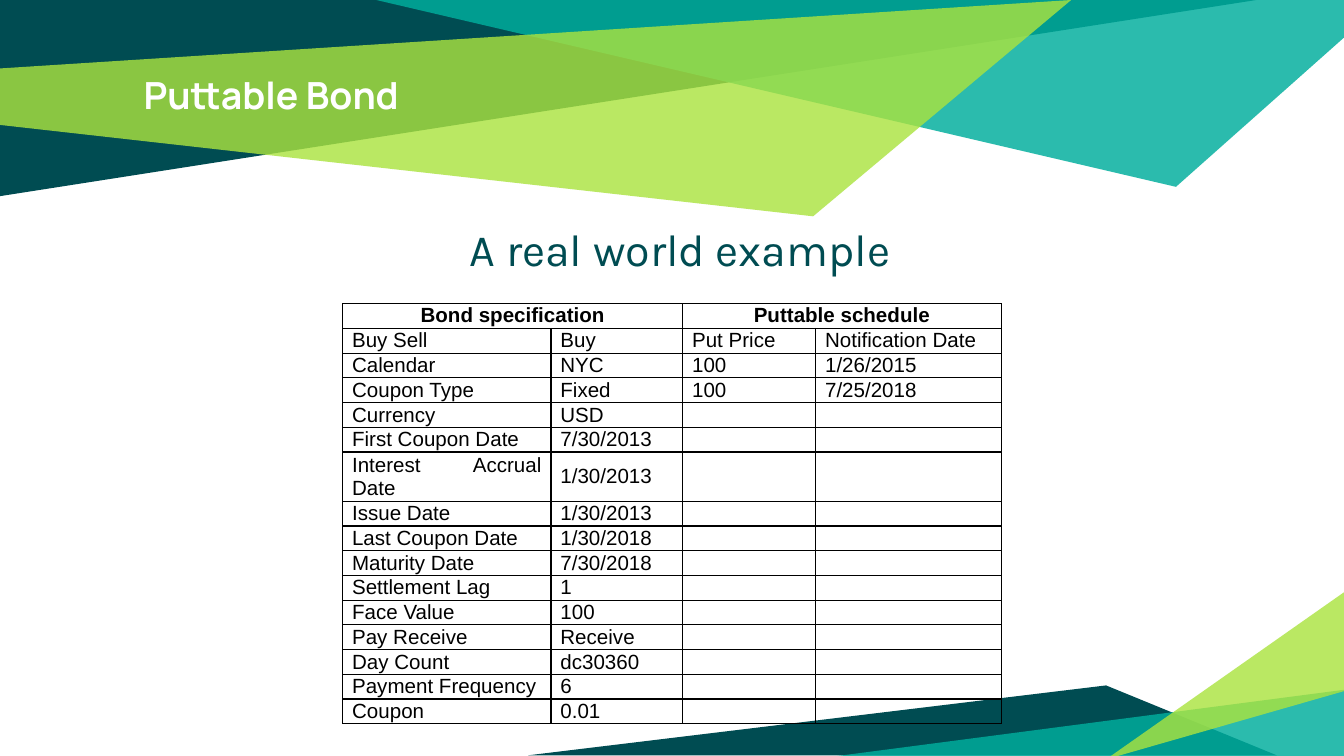
from dataclasses import dataclass

from lxml import etree
from pptx import Presentation
from pptx.dml.color import RGBColor
from pptx.enum.text import MSO_ANCHOR, PP_ALIGN
from pptx.oxml.ns import qn
from pptx.util import Inches, Pt

LEFT, CENTER, JUSTIFY = PP_ALIGN.LEFT, PP_ALIGN.CENTER, PP_ALIGN.JUSTIFY
TOP, MIDDLE = MSO_ANCHOR.TOP, MSO_ANCHOR.MIDDLE


@dataclass(frozen=True)
class Theme:
    dark: str = "004C52"
    teal: str = "00AE9D"
    lime: str = "ABE33F"
    white: str = "FFFFFF"
    black: str = "000000"
    title_font: str = "Manrope"
    body_font: str = "Karla"
    table_font: str = "Arial"
    title_size: int = 20
    body_size: int = 24
    table_size: int = 11
    border: float = 0.75


T = Theme()

# Colour, opacity in percent, corner points in inches
BANDS = [
    (T.dark, 100, [(0, 0), (0, 1.46), (9.35, 0)]),
    (T.teal, 83, [(2.8, 0), (8.75, 1.39), (10, 0.28), (10, 0)]),
    (T.lime, 81, [(-0.01, 0.51), (0, 0.93), (6.05, 1.61), (7.97, 0)]),
    (T.dark, 100, [(3.93, 5.62), (9.5, 5.62), (8.23, 5.1)]),
    (T.teal, 83, [(10.02, 5.13), (10.02, 5.65), (6.04, 5.65)]),
    (T.lime, 81, [(10.01, 5.14), (10.01, 4.4), (8.23, 5.65)]),
]

HEADERS = ["Bond specification", "Puttable schedule"]
SPECIFICATION = [
    ("Buy Sell", "Buy"),
    ("Calendar", "NYC"),
    ("Coupon Type", "Fixed"),
    ("Currency", "USD"),
    ("First Coupon Date", "7/30/2013"),
    ("Interest Accrual Date", "1/30/2013"),
    ("Issue Date", "1/30/2013"),
    ("Last Coupon Date", "1/30/2018"),
    ("Maturity Date", "7/30/2018"),
    ("Settlement Lag", "1"),
    ("Face Value", "100"),
    ("Pay Receive", "Receive"),
    ("Day Count", "dc30360"),
    ("Payment Frequency", "6"),
    ("Coupon", "0.01"),
]
SCHEDULE = [
    ("Put Price", "Notification Date"),
    ("100", "1/26/2015"),
    ("100", "7/25/2018"),
]
COLUMNS = [1.55, 0.98, 0.99, 1.38]
TABLE_HEIGHT = 3.12


def add_band(s, color, opacity, points):
    corners = [(Inches(x), Inches(y)) for x, y in points]
    builder = s.shapes.build_freeform(*corners[0])
    builder.add_line_segments(corners[1:], close=True)
    sp = builder.convert_to_shape()
    sp.shadow.inherit = False
    sp.line.fill.background()
    sp.fill.solid()
    sp.fill.fore_color.rgb = RGBColor.from_string(color)
    if opacity < 100:
        clr = sp.fill._xPr.find(qn("a:solidFill"))[0]
        etree.SubElement(clr, qn("a:alpha"), val=str(opacity * 1000))


def add_run(p, text, font, size, color, bold=False):
    r = p.add_run()
    r.text = text
    r.font.name = font
    r.font.size = Pt(size)
    r.font.bold = bold
    r.font.color.rgb = RGBColor.from_string(color)


def add_text(s, box, align=LEFT):
    """Add a top-anchored text box and return its first paragraph."""
    tf = s.shapes.add_textbox(*map(Inches, box)).text_frame
    tf.word_wrap = True
    tf.vertical_anchor = TOP
    tf.margin_left = tf.margin_right = Inches(0.1)
    tf.margin_top = tf.margin_bottom = Inches(0.1)
    p = tf.paragraphs[0]
    p.alignment = align
    return p


def set_borders(cell):
    tcPr = cell._tc.get_or_add_tcPr()
    for side in ("a:lnL", "a:lnR", "a:lnT", "a:lnB"):
        ln = etree.SubElement(tcPr, qn(side), w=str(Pt(T.border)))
        fill = etree.SubElement(ln, qn("a:solidFill"))
        etree.SubElement(fill, qn("a:srgbClr"), val=T.black)


def fill_cell(cell, text, header=False):
    cell.margin_left = cell.margin_right = Inches(0.07)
    cell.margin_top = cell.margin_bottom = 0
    cell.vertical_anchor = TOP if header else MIDDLE
    p = cell.text_frame.paragraphs[0]
    p.alignment = CENTER if header else JUSTIFY
    p.space_before = Pt(6)
    if text:
        add_run(p, text, T.table_font, T.table_size, T.black, header)
    else:
        # Keeps an empty cell as low as a filled one
        etree.SubElement(p._p, qn("a:endParaRPr"), sz=str(T.table_size * 100))


def add_bond_table(s):
    rows = len(SPECIFICATION) + 1
    frame = s.shapes.add_table(rows, len(COLUMNS), Inches(2.55), Inches(2.26),
                               Inches(sum(COLUMNS)), Inches(TABLE_HEIGHT))
    table = frame.table
    table.first_row = table.horz_banding = False
    for column, width in zip(table.columns, COLUMNS):
        column.width = Inches(width)
    # Rows take their height from the text
    for row in table.rows:
        row.height = 0
    frame.height = Inches(TABLE_HEIGHT)
    for cell in table.iter_cells():
        set_borders(cell)
        cell.fill.background()

    # Header row: each title spans two columns
    for i, header in enumerate(HEADERS):
        first, second = table.cell(0, 2 * i), table.cell(0, 2 * i + 1)
        fill_cell(second, "", header=True)
        first.merge(second)
        fill_cell(first, header, header=True)

    # Body rows: the schedule is shorter than the specification
    for i, spec_pair in enumerate(SPECIFICATION):
        put_pair = SCHEDULE[i] if i < len(SCHEDULE) else ("", "")
        for j, text in enumerate(spec_pair + put_pair):
            fill_cell(table.cell(i + 1, j), text)


def main():
    prs = Presentation()
    prs.slide_width = Inches(10)
    prs.slide_height = prs.slide_width * 9 // 16
    s = prs.slides.add_slide(prs.slide_layouts[6])

    # Background bands
    for band in BANDS:
        add_band(s, *band)

    # Title
    p = add_text(s, (0.97, 0.44, 8.06, 0.64))
    add_run(p, "Puttable Bond", T.title_font, T.title_size, T.white, True)

    # Subtitle
    p = add_text(s, (0.91, 1.55, 8.22, 3.62), CENTER)
    p.space_before = Pt(6)
    p._p.get_or_add_pPr().set("marL", str(Inches(0.08)))
    add_run(p, "A real world example", T.body_font, T.body_size, T.dark)

    # Bond data
    add_bond_table(s)

    prs.save("out.pptx")


if __name__ == "__main__":
    main()
